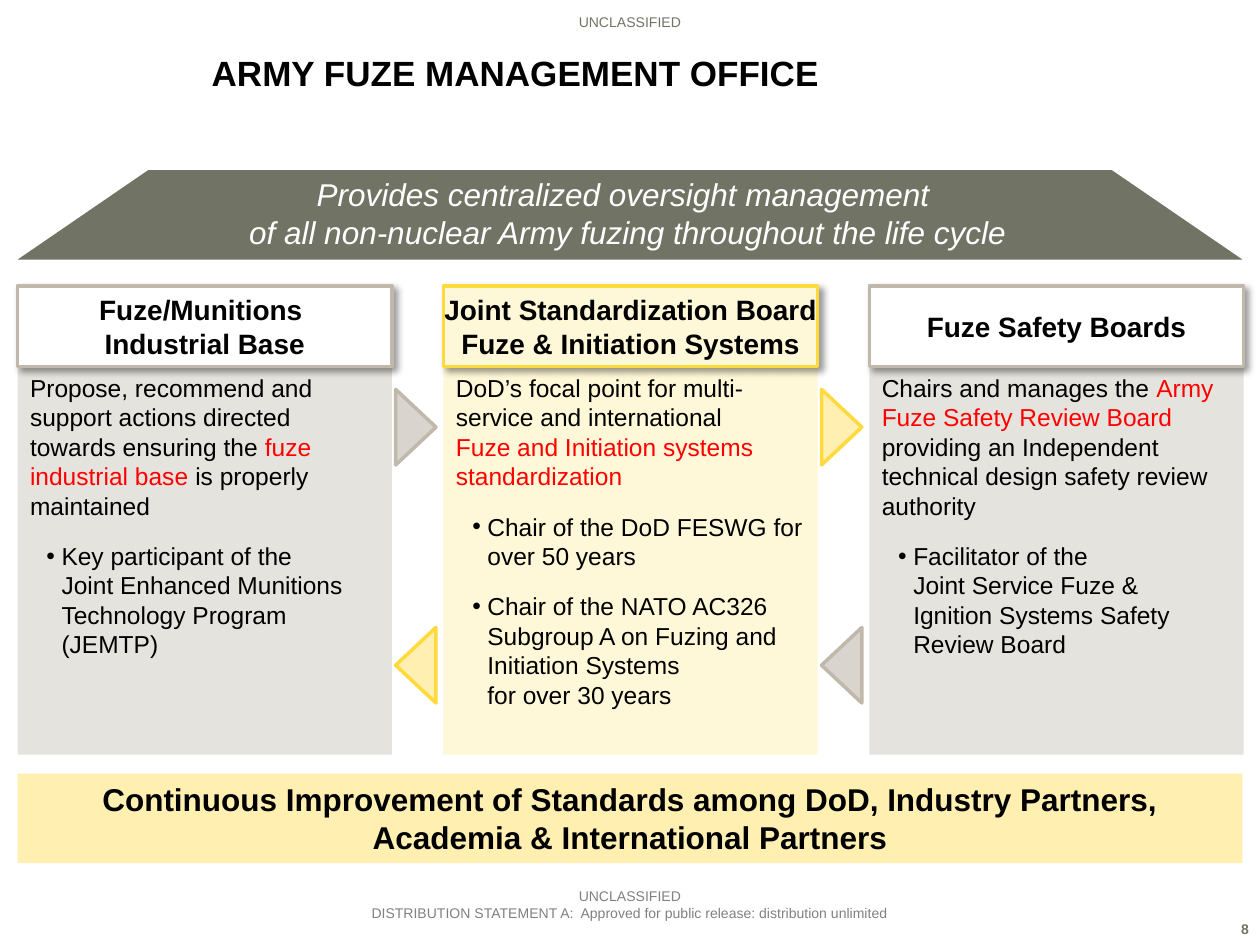
from lxml import etree
from pptx import Presentation
from pptx.dml.color import RGBColor
from pptx.enum.shapes import MSO_SHAPE
from pptx.enum.text import MSO_ANCHOR, PP_ALIGN
from pptx.oxml.ns import qn
from pptx.util import Inches, Pt

RECT, TRAPEZOID, MERGE = MSO_SHAPE.RECTANGLE, MSO_SHAPE.TRAPEZOID, MSO_SHAPE.FLOWCHART_MERGE
TOP, MIDDLE, BOTTOM = MSO_ANCHOR.TOP, MSO_ANCHOR.MIDDLE, MSO_ANCHOR.BOTTOM
LEFT, CENTER, RIGHT = PP_ALIGN.LEFT, PP_ALIGN.CENTER, PP_ALIGN.RIGHT

BLACK, WHITE, RED, OLIVE, GRAY = "000000", "FFFFFF", "FF0000", "717365", "808080"
STONE, STONE_LINE, STONE_PANEL = "D9D4CD", "BFB8AB", "E5E3DD"
GOLD, GOLD_LINE, GOLD_PANEL = "FFF0B1", "FFDA3D", "FFF8D8"
MARGIN, COL_W, STEP = 0.14, 2.97, 3.38

COLUMNS = [
    ("Fuze/Munitions \nIndustrial Base", WHITE, STONE_LINE, STONE_PANEL,
     [("Propose, recommend and support actions directed towards ensuring the ", BLACK),
      ("fuze industrial base ", RED), ("is properly maintained", BLACK)],
     ["Key participant of the \nJoint Enhanced Munitions Technology Program (JEMTP)"]),
    ("Joint Standardization Board\nFuze & Initiation Systems", GOLD_PANEL, GOLD_LINE, GOLD_PANEL,
     [("DoD’s focal point for multi-service and international \n", BLACK),
      ("Fuze and Initiation systems standardization", RED)],
     ["Chair of the DoD FESWG for over 50 years",
      "Chair of the NATO AC326 Subgroup A on Fuzing and Initiation Systems \nfor over 30 years"]),
    ("Fuze Safety Boards", WHITE, STONE_LINE, STONE_PANEL,
     [("Chairs and manages the ", BLACK), ("Army Fuze Safety Review Board ", RED),
      ("providing an Independent technical design safety review authority", BLACK)],
     ["Facilitator of the \nJoint Service Fuze & \nIgnition Systems Safety Review Board"]),
]
ARROWS = [
    (0, 3.23, 270, STONE, STONE_LINE),
    (1, 3.23, 270, GOLD, GOLD_LINE),
    (0, 5.12, 90, GOLD, GOLD_LINE),
    (1, 5.12, 90, STONE, STONE_LINE),
]


def rgb(value):
    """Turn a hex string into a colour."""
    return RGBColor.from_string(value)


def add_text(p, text, size=14, color=BLACK, bold=False, italic=False):
    """Add formatted text to a paragraph, with a line break at each newline."""
    for i, line in enumerate(text.split("\n")):
        if i:
            p.add_line_break()
        if line:
            r = p.add_run()
            r.text = line
            r.font.name, r.font.size = "Arial", Pt(size)
            r.font.bold, r.font.italic = bold, italic
            r.font.color.rgb = rgb(color)


class Deck:
    """Hold the style and the current slide."""

    def __init__(self, prs):
        """Add a slide with only a title."""
        self.s = prs.slides.add_slide(prs.slide_layouts[5])

    def frame(self, sp, anchor=TOP, side=0.1):
        """Set up the text frame of a shape."""
        tf = sp.text_frame
        tf.word_wrap, tf.vertical_anchor = True, anchor
        tf.margin_left = tf.margin_right = Inches(side)
        return tf

    def title(self, text, x, y, w, h):
        """Place and fill the title."""
        sp = self.s.shapes.title
        sp.left, sp.top, sp.width, sp.height = map(Inches, (x, y, w, h))
        p = self.frame(sp, MIDDLE).paragraphs[0]
        p.alignment = LEFT
        add_text(p, text, size=20, bold=True)

    def label(self, text, x, y, w, h, anchor=TOP, align=CENTER, **fmt):
        """Add a text box."""
        sp = self.s.shapes.add_textbox(*map(Inches, (x, y, w, h)))
        p = self.frame(sp, anchor).paragraphs[0]
        p.alignment = align
        add_text(p, text, **fmt)

    def shape(self, kind, x, y, w, h, fill, line=None):
        """Add a flat preset shape."""
        sp = self.s.shapes.add_shape(kind, *map(Inches, (x, y, w, h)))
        sp.shadow.inherit = False
        sp.fill.solid()
        sp.fill.fore_color.rgb = rgb(fill)
        if line:
            sp.line.color.rgb = rgb(line)
            sp.line.width = Pt(2)
        else:
            sp.line.fill.background()
        return sp

    def shadow(self, sp):
        """Give a shape a soft shadow to the lower right."""
        effects = sp._element.spPr.find(qn("a:effectLst"))
        outer = etree.SubElement(effects, qn("a:outerShdw"), blurRad=str(Pt(4)), dist=str(Pt(3)),
                                 dir="2700000", algn="tl", rotWithShape="0")
        color = etree.SubElement(outer, qn("a:srgbClr"), val=BLACK)
        etree.SubElement(color, qn("a:alpha"), val="40000")

    def box(self, text, x, y, w, h, fill, line=None, anchor=TOP, side=0.1, **fmt):
        """Add a rectangle with centred text."""
        sp = self.shape(RECT, x, y, w, h, fill, line)
        p = self.frame(sp, anchor, side).paragraphs[0]
        p.alignment = CENTER
        add_text(p, text, bold=True, **fmt)
        return sp

    def panel(self, x, fill, intro, bullets):
        """Add a column body with an introduction and bullets."""
        tf = self.frame(self.shape(RECT, x, 2.91, COL_W, 3.08, fill))
        p = tf.paragraphs[0]
        p.alignment, p.space_after = LEFT, Pt(6)
        for text, color in intro:
            add_text(p, text, color=color)
        for text in bullets:
            p = tf.add_paragraph()
            pPr = p._p.get_or_add_pPr()
            pPr.set("marL", str(Inches(0.25)))
            pPr.set("indent", str(Inches(-0.12)))
            etree.SubElement(pPr, qn("a:buFont"), typeface="Arial")
            etree.SubElement(pPr, qn("a:buChar"), char="•")
            p.alignment = LEFT
            p.space_before = p.space_after = Pt(6)
            add_text(p, text)

    def arrow(self, x, y, rotation, fill, line):
        """Add a triangle turned to one side."""
        self.shape(MERGE, x, y, 0.6, 0.32, fill, line).rotation = rotation


def main():
    """Build the slide and save it."""
    prs = Presentation()
    prs.slide_width, prs.slide_height = Inches(10), Inches(7.5)
    deck = Deck(prs)
    deck.label("UNCLASSIFIED", 0, 0.05, 10, 0.24, BOTTOM, size=8, color=OLIVE)
    deck.label("UNCLASSIFIED\nDISTRIBUTION STATEMENT A:  Approved for public release: "
               "distribution unlimited", 1.5, 6.99, 7, 0.37, BOTTOM, size=8, color=GRAY)
    deck.label("8", 9.55, 7.26, 0.46, 0.24, align=RIGHT, size=8, color=OLIVE, bold=True)
    deck.title("ARMY FUZE MANAGEMENT OFFICE", 1.58, 0.3, 6.5, 0.55)

    roof = deck.shape(TRAPEZOID, MARGIN, 1.35, 9.72, 0.71, OLIVE)
    roof.adjustments[0] = 1.46
    deck.label("Provides centralized oversight management \n"
               "of all non-nuclear Army fuzing throughout the life cycle",
               1.17, 1.34, 7.62, 0.71, size=18, color=WHITE, italic=True)

    for i, (heading, fill, line, body, intro, bullets) in enumerate(COLUMNS):
        x = MARGIN + i * STEP
        deck.panel(x, body, intro, bullets)
        sp = deck.box(heading, x, 2.27, COL_W, 0.64, fill, line, MIDDLE, side=0, size=16)
        deck.shadow(sp)
    for gap, y, rotation, fill, line in ARROWS:
        deck.arrow(3 + gap * STEP, y, rotation, fill, line)

    deck.box("Continuous Improvement of Standards among DoD, Industry Partners, "
             "Academia & International Partners", MARGIN, 6.14, 9.72, 0.71, GOLD, size=18)
    prs.save("out.pptx")


if __name__ == "__main__":
    main()
